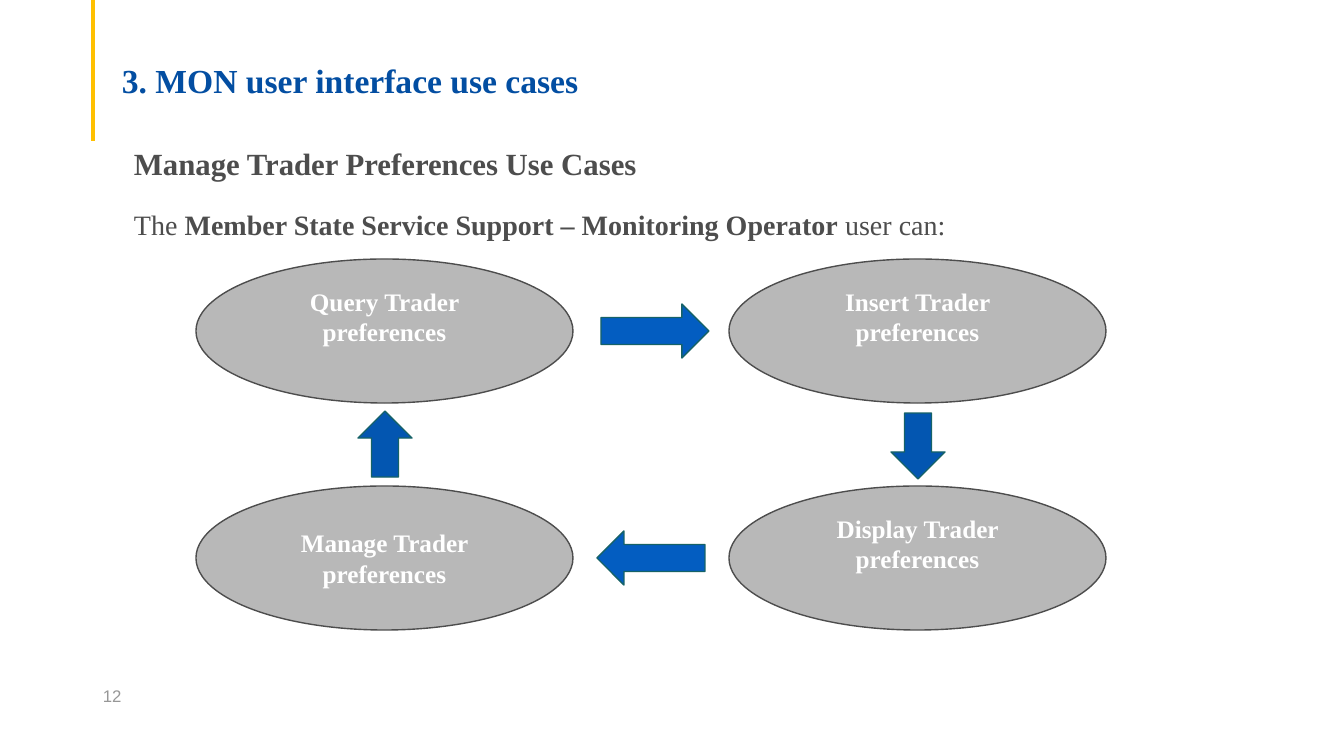
from pptx import Presentation
from pptx.dml.color import RGBColor
from pptx.enum.shapes import MSO_CONNECTOR, MSO_SHAPE
from pptx.enum.text import MSO_ANCHOR, PP_ALIGN
from pptx.oxml.ns import qn
from pptx.util import Pt
from lxml import etree

PX = 914400 / 100.8
STRAIGHT = MSO_CONNECTOR.STRAIGHT
OVAL = MSO_SHAPE.OVAL
RIGHT, DOWN = MSO_SHAPE.RIGHT_ARROW, MSO_SHAPE.DOWN_ARROW
LEFT, UP = MSO_SHAPE.LEFT_ARROW, MSO_SHAPE.UP_ARROW
MIDDLE, BOTTOM, TOP = MSO_ANCHOR.MIDDLE, MSO_ANCHOR.BOTTOM, MSO_ANCHOR.TOP
CENTER, JUSTIFY = PP_ALIGN.CENTER, PP_ALIGN.JUSTIFY
SERIF, SANS = "Times New Roman", "Arial"
COLORS = {
    "rule": "FFC000", "title": "034EA2", "text": "4D4D4D", "number": "979797",
    "oval": "B8B8B8", "white": "FFFFFF", "across": "035DC1",
    "vertical": "0356B1", "arrow_line": "166267",
}
COLORS = {name: RGBColor.from_string(value) for name, value in COLORS.items()}


def add_shape(kind, box, fill, line):
    sp = s.shapes.add_shape(kind, *[round(v * PX) for v in box])
    sp.shadow.inherit = False
    sp.fill.solid()
    sp.fill.fore_color.rgb = COLORS[fill]
    sp.line.color.rgb = COLORS[line]
    sp.line.width = Pt(1)
    return sp


def set_font(p, name, size, color, bold=None):
    p.font.name = name
    p.font.size = Pt(size)
    p.font.bold = bold
    p.font.color.rgb = COLORS[color]


prs = Presentation()
prs.slide_width = round(1344 * PX)
prs.slide_height = round(756 * PX)
s = prs.slides.add_slide(prs.slide_layouts[6])

rule = s.shapes.add_connector(STRAIGHT, round(93 * PX), 0, round(93 * PX), round(141 * PX))
rule.line.color.rgb = COLORS["rule"]
rule.line.width = Pt(2.25)
etree.SubElement(rule._element.spPr, qn("a:effectLst"))

frames = []
for box, anchor in [
    ((112, 52, 1159, 49), BOTTOM),
    ((93, 676, 302, 40), MIDDLE),
    ((124, 140, 1102, 497), TOP),
]:
    tf = s.shapes.add_textbox(*[round(v * PX) for v in box]).text_frame
    tf.word_wrap = True
    tf.vertical_anchor = anchor
    frames.append(tf)
title, number, body = frames

title.margin_bottom = 0
p = title.paragraphs[0]
p.text = "3. MON user interface use cases"
p.line_spacing = 0.9
set_font(p, SERIF, 24, "title", True)

p = number.paragraphs[0]
p.text = "12"
set_font(p, SANS, 12, "number")

p = body.paragraphs[0]
p.text = "Manage Trader Preferences Use Cases"
p.alignment = JUSTIFY
p.space_after = Pt(18)
set_font(p, SERIF, 22, "text", True)

p = body.add_paragraph()
p.space_after = Pt(18)
set_font(p, SERIF, 20, "text")
for text, bold in [
    ("The ", False),
    ("Member State Service Support – Monitoring Operator ", True),
    ("user can:", False),
]:
    r = p.add_run()
    r.text = text
    r.font.bold = bold

for x, y, action, bottom in [
    (196, 259, "Query", 34),
    (729, 259, "Insert", 34),
    (196, 486, "Manage", 5),
    (729, 486, "Display", 34),
]:
    sp = add_shape(OVAL, (x, y, 377, 144), "oval", "text")
    tf = sp.text_frame
    tf.word_wrap = True
    tf.vertical_anchor = MIDDLE
    tf.margin_bottom = round(bottom * PX)
    p = tf.paragraphs[0]
    p.text = f"{action} Trader preferences"
    p.alignment = CENTER
    set_font(p, SERIF, 18, "white", True)

for kind, box, fill in [
    (RIGHT, (601, 304, 108, 54), "across"),
    (DOWN, (891, 413, 54, 66), "vertical"),
    (UP, (358, 411, 54, 66), "vertical"),
    (LEFT, (597, 531, 108, 54), "across"),
]:
    add_shape(kind, box, fill, "arrow_line")

prs.save("out.pptx")
